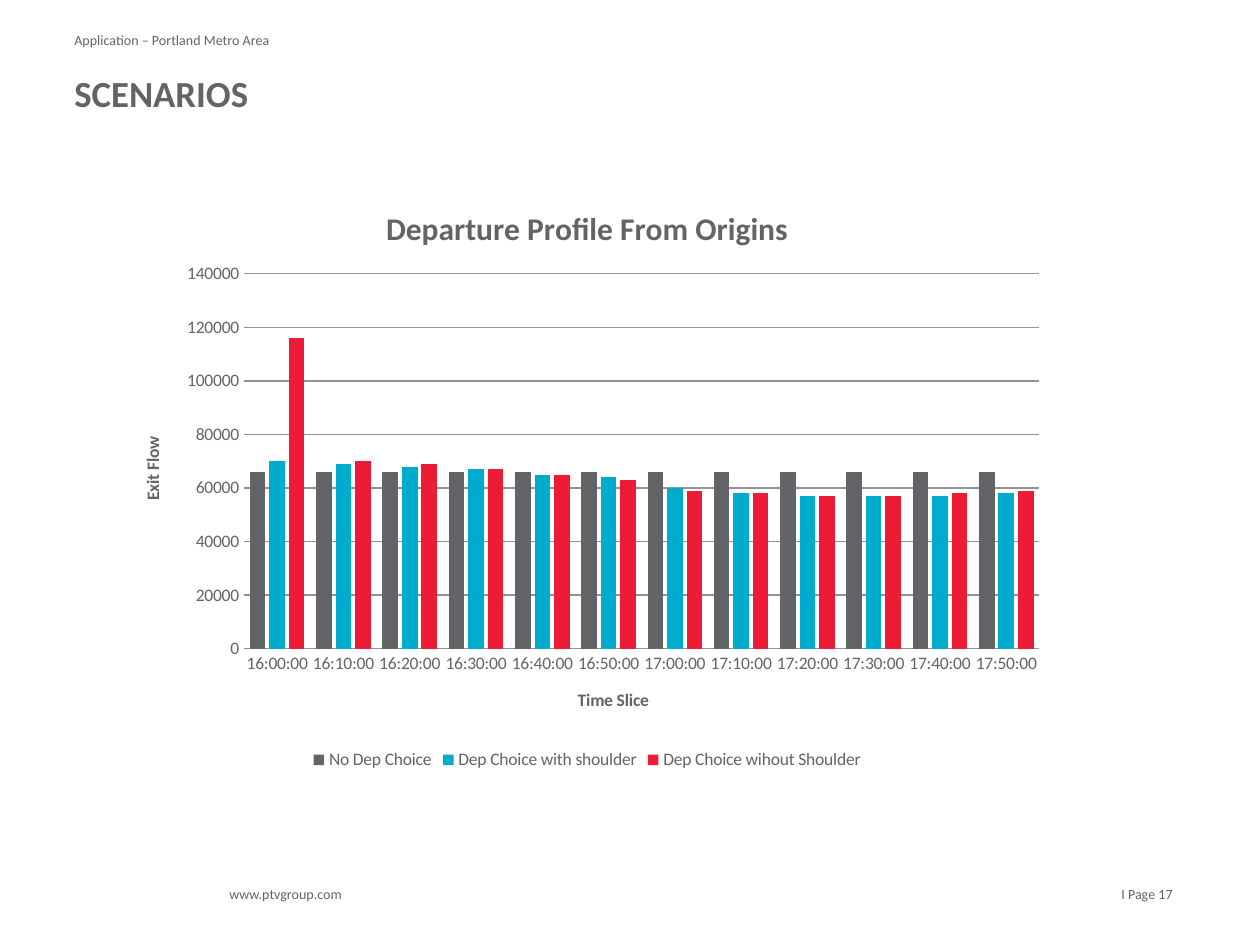
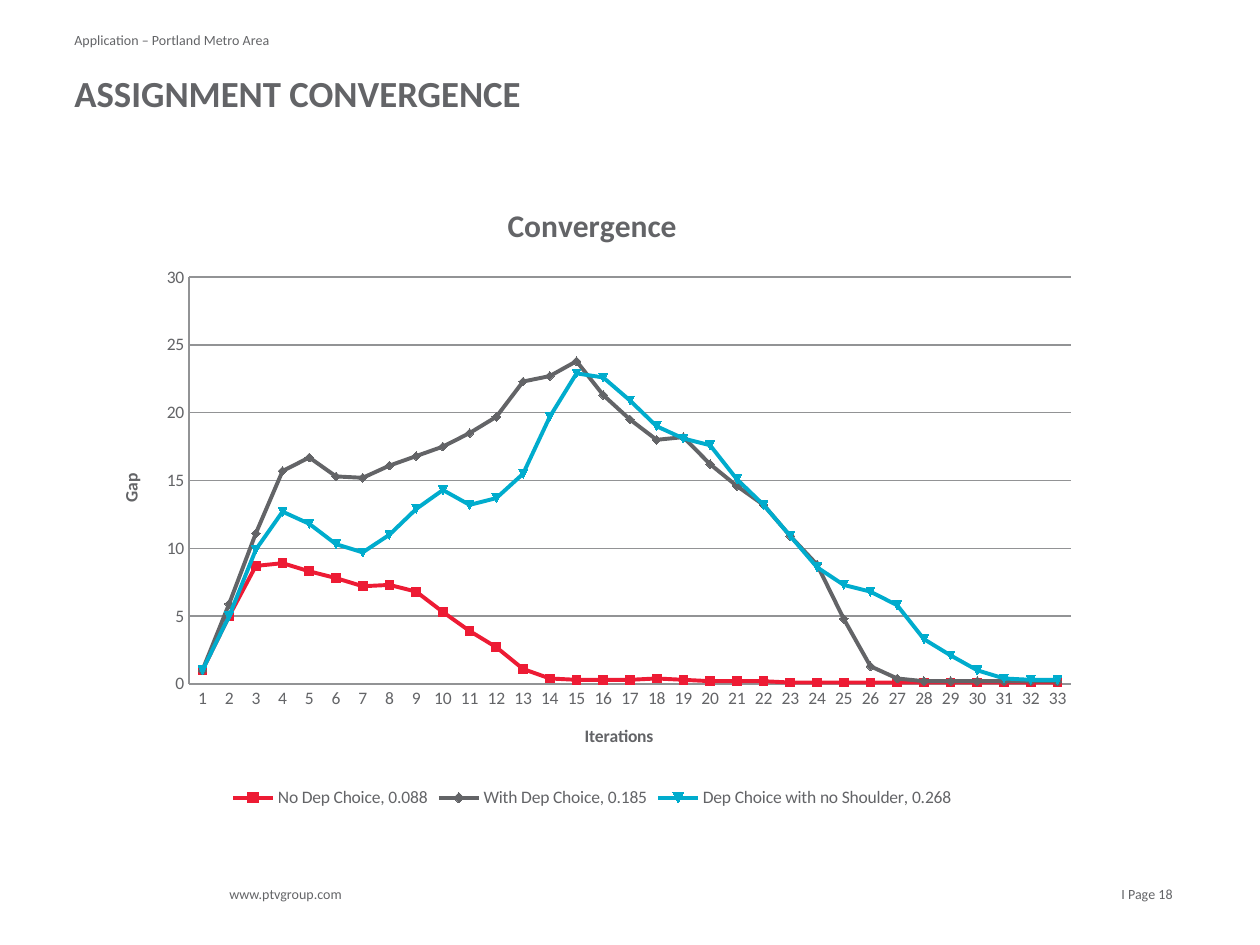
import pptx
import pptx.util
import pptx.chart.data
import pptx.dml.color
import pptx.enum.chart
import pptx.enum.text
import pptx.oxml

Inches = pptx.util.Inches
Pt = pptx.util.Pt
kinds = pptx.enum.chart.XL_CHART_TYPE
anchors = pptx.enum.text.MSO_ANCHOR
colors = {"gray": "636467", "blue": "00ACCD", "red": "ED1B34", "grid": "929395"}
face = "Calibri"


def tone(name):
    return pptx.dml.color.RGBColor.from_string(colors[name])


def write(frame, text, size=8, bold=False, anchor=None, lead=None, after=None):
    frame.text = text
    para = frame.paragraphs[0]
    para.alignment = pptx.enum.text.PP_ALIGN.LEFT if anchor is not None else None
    para.line_spacing = lead
    para.space_after = after
    font = para.runs[0].font
    font.name, font.size, font.bold = face, Pt(size), bold
    font.color.rgb = tone("gray")
    if anchor is not None:
        frame.margin_left = frame.margin_right = frame.margin_top = frame.margin_bottom = 0
        frame.word_wrap = True
        frame.vertical_anchor = anchor


pages = [
    {
        "title": "SCENARIOS",
        "number": 17,
        "kind": kinds.COLUMN_CLUSTERED,
        "at": (0.92, 1.45, 7.48, 4.7),
        "plot": {"x": 0.136, "y": 0.154, "w": 0.844, "h": 0.633},
        "chart": "Departure Profile From Origins",
        "axes": ("Time Slice", "Exit Flow"),
        "scale": (140000, 20000),
        "cats": [f"{16 + i // 6}:{i % 6}0:00" for i in range(12)],
        "series": [
            ("No Dep Choice", "gray", [66000] * 12),
            ("Dep Choice with shoulder", "blue",
             [70000, 69000, 68000, 67000, 65000, 64000,
              60000, 58000, 57000, 57000, 57000, 58000]),
            ("Dep Choice wihout Shoulder", "red",
             [116000, 70000, 69000, 67000, 65000, 63000,
              59000, 58000, 57000, 57000, 58000, 59000]),
        ],
    },
    {
        "title": "ASSIGNMENT CONVERGENCE",
        "number": 18,
        "kind": kinds.LINE_MARKERS,
        "at": (0.75, 1.42, 7.9, 5.03),
        "plot": {"x": 0.095, "y": 0.155, "w": 0.886, "h": 0.642},
        "chart": "Convergence",
        "axes": ("Iterations", "Gap"),
        "scale": (30, 5),
        "cats": [str(i) for i in range(1, 34)],
        "series": [
            ("No Dep Choice, 0.088", "red",
             [1, 5, 8.7, 8.9, 8.3, 7.8, 7.2, 7.3, 6.8, 5.3, 3.9,
              2.7, 1.1, 0.4, 0.3, 0.3, 0.3, 0.4, 0.3, 0.2, 0.2, 0.2] + [0.1] * 11),
            ("With Dep Choice, 0.185", "gray",
             [1, 5.9, 11.1, 15.7, 16.7, 15.3, 15.2, 16.1, 16.8, 17.5, 18.5,
              19.7, 22.3, 22.7, 23.8, 21.3, 19.5, 18, 18.2, 16.2, 14.6, 13.2,
              10.9, 8.8, 4.8, 1.3, 0.4] + [0.2] * 6),
            ("Dep Choice with no Shoulder, 0.268", "blue",
             [1, 5, 9.9, 12.7, 11.8, 10.3, 9.7, 11, 12.9, 14.3, 13.2,
              13.7, 15.5, 19.7, 22.9, 22.6, 20.9, 19, 18.1, 17.6, 15.1, 13.2,
              10.9, 8.6, 7.3, 6.8, 5.8, 3.3, 2.1, 1, 0.4, 0.3, 0.3]),
        ],
    },
]

deck = pptx.Presentation()
deck.slide_width, deck.slide_height = Inches(10), Inches(7.5)

for page in pages:
    slide = deck.slides.add_slide(deck.slide_layouts[5])
    title = slide.shapes.title
    title.left, title.top = Inches(0.59), Inches(0.54)
    title.width, title.height = Inches(8.82), Inches(0.54)
    write(title.text_frame, page["title"], size=21, bold=True, anchor=anchors.TOP, lead=1.05)

    for text, box, anchor, after in [
        ("Application – Portland Metro Area", (0.59, 0.25, 8.82, 0.2), anchors.TOP, Pt(6)),
        ("www.ptvgroup.com", (1.82, 6.92, 0.95, 0.24), anchors.BOTTOM, None),
        (f"I Page {page['number']}", (8.9, 6.92, 0.67, 0.24), anchors.BOTTOM, None),
    ]:
        label = slide.shapes.add_textbox(*map(Inches, box))
        write(label.text_frame, text, anchor=anchor, after=after)

    data = pptx.chart.data.CategoryChartData(number_format="General")
    data.categories = page["cats"]
    for name, color, values in page["series"]:
        data.add_series(name, values)
    chart = slide.shapes.add_chart(page["kind"], *map(Inches, page["at"]), data).chart
    chart.font.name, chart.font.size = face, Pt(10)
    chart.font.color.rgb = tone("gray")
    chart.has_title = True
    write(chart.chart_title.text_frame, page["chart"], size=18, bold=True)
    chart.chart_title.include_in_layout = False
    chart.has_legend = True
    chart.legend.position = pptx.enum.chart.XL_LEGEND_POSITION.BOTTOM
    chart.legend.include_in_layout = False

    for axis, text in zip((chart.category_axis, chart.value_axis), page["axes"]):
        write(axis.axis_title.text_frame, text, size=10, bold=True)
        axis.major_tick_mark = axis.minor_tick_mark = pptx.enum.chart.XL_TICK_MARK.NONE
        axis.format.line.color.rgb = tone("grid")
        axis.format.line.width = Pt(0.75)
    value = chart.value_axis
    value.minimum_scale = 0
    value.maximum_scale, value.major_unit = page["scale"]
    value.tick_labels.number_format = "0"
    value.tick_labels.number_format_is_linked = False
    value.has_major_gridlines = True
    value.major_gridlines.format.line.color.rgb = tone("grid")
    value.major_gridlines.format.line.width = Pt(0.75)

    plot = chart.plots[0]
    plot.vary_by_categories = False
    bars = page["kind"] == kinds.COLUMN_CLUSTERED
    if bars:
        plot.gap_width, plot.overlap = 75, -25
        value.format.line.fill.background()
    for series, (name, color, values) in zip(plot.series, page["series"]):
        if bars:
            fills = [series.format.fill]
        else:
            series.smooth = False
            series.format.line.width = Pt(2.25)
            fills = [series.format.line.fill, series.marker.format.fill,
                     series.marker.format.line.fill]
        for fill in fills:
            fill.solid()
            fill.fore_color.rgb = tone(color)

    area = chart.element.find(".//" + pptx.oxml.ns.qn("c:plotArea"))
    for old in area.findall(pptx.oxml.ns.qn("c:layout")):
        area.remove(old)
    sides = "".join(f'<c:{key} val="{size}"/>' for key, size in page["plot"].items())
    area.insert(0, pptx.oxml.parse_xml(
        f'<c:layout {pptx.oxml.ns.nsdecls("c")}><c:manualLayout>'
        '<c:layoutTarget val="inner"/><c:xMode val="edge"/><c:yMode val="edge"/>'
        f'{sides}</c:manualLayout></c:layout>'))

deck.save("out.pptx")
